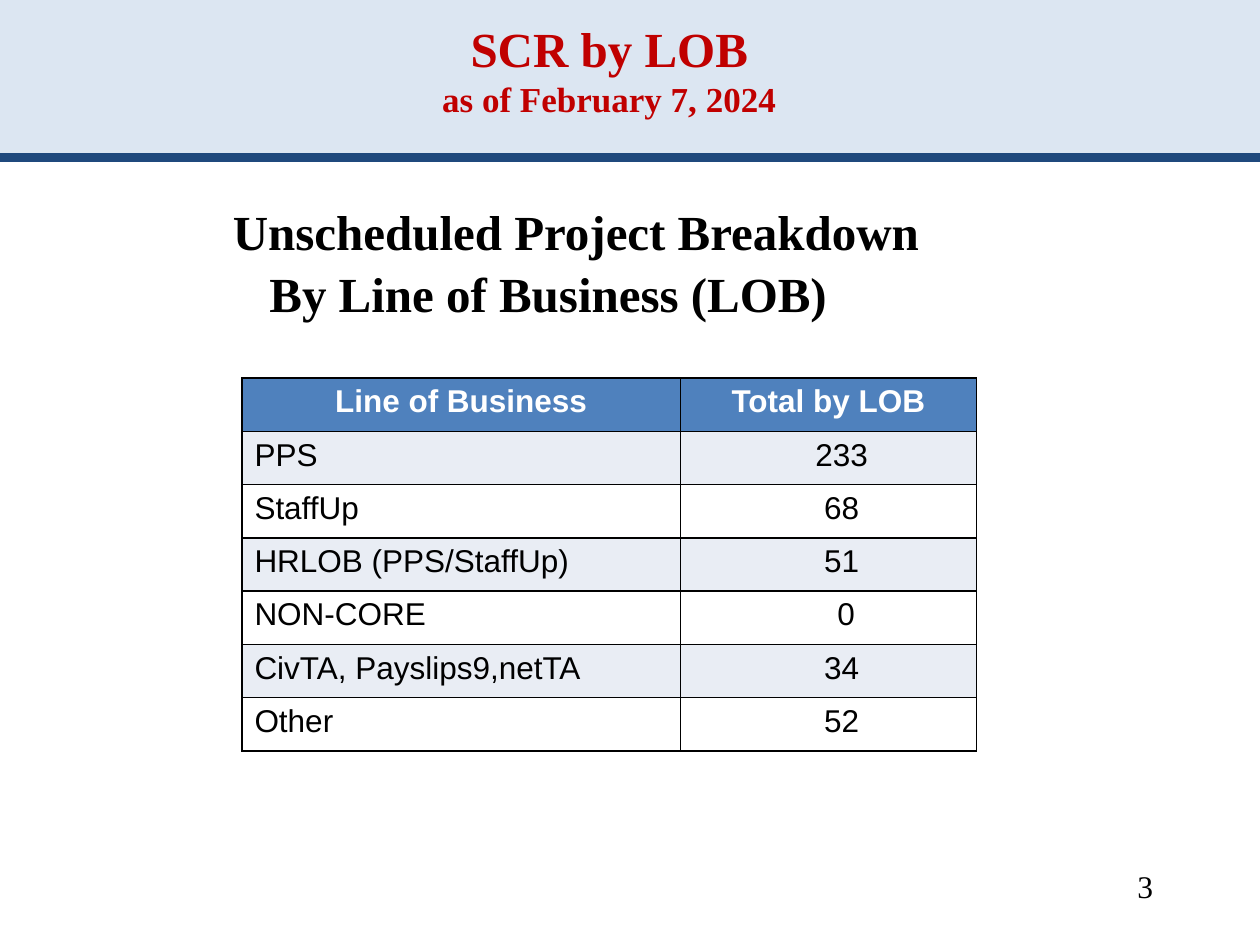
from lxml import etree
from pptx import Presentation, util as u
from pptx.dml.color import RGBColor
from pptx.enum import shapes, text
from pptx.oxml.ns import qn

COLORS = {
    "band": "DCE6F2", "rule": "1F497D", "title": "C00000", "black": "000000",
    "white": "FFFFFF", "header": "4F81BD", "stripe": "E9EDF4",
}
SERIF, SANS = "Times New Roman", "Arial"
CENTER, RIGHT = text.PP_ALIGN.CENTER, text.PP_ALIGN.RIGHT

HEADINGS = ("Line of Business", "Total by LOB")
TOTALS = [
    ("PPS", "233"),
    ("StaffUp", "68"),
    ("HRLOB (PPS/StaffUp)", "51"),
    ("NON-CORE", "0"),
    ("CivTA, Payslips9,netTA", "34"),
    ("Other", "52"),
]


class SlideBuilder:
    """Holds the colours and the current page, and draws each kind of element."""

    def __init__(self, page):
        self.page = page

    def color(self, name):
        return RGBColor.from_string(COLORS[name])

    def style(self, para, size, face, color, bold=False, align=None):
        para.alignment = align
        font = para.font
        font.size, font.name, font.bold = u.Pt(size), face, bold
        font.color.rgb = self.color(color)

    def band(self, left, top, width, height, color):
        box = self.page.shapes.add_shape(
            shapes.MSO_SHAPE.RECTANGLE, *map(u.Inches, (left, top, width, height)))
        box.shadow.inherit = False
        box.fill.solid()
        box.fill.fore_color.rgb = self.color(color)
        box.line.fill.background()

    def rule(self, left, top, right, color, weight):
        line = self.page.shapes.add_connector(
            shapes.MSO_CONNECTOR.STRAIGHT, *map(u.Inches, (left, top, right, top)))
        line.line.color.rgb = self.color(color)
        line.line.width = u.Pt(weight)
        etree.SubElement(line._element.spPr, qn("a:effectLst"))

    def text_frame(self, left, top, width, height, anchor=text.MSO_ANCHOR.TOP):
        box = self.page.shapes.add_textbox(*map(u.Inches, (left, top, width, height)))
        frame = box.text_frame
        frame.word_wrap = True
        frame.vertical_anchor = anchor
        return frame

    def title(self, heading, subheading):
        frame = self.text_frame(0.17, 0.3, 9.33, 0.7, text.MSO_ANCHOR.BOTTOM)
        para = frame.paragraphs[0]
        self.style(para, 28, SERIF, "title", True, CENTER)
        para.add_run().text = heading
        para.add_line_break()
        span = para.add_run()
        span.text = subheading
        span.font.size = u.Pt(20)

    def body(self, lines):
        frame = self.text_frame(0.5, 1.5, 9, 1.3)
        frame.margin_top = u.Inches(0.1)
        for index, (words, indent) in enumerate(lines):
            para = frame.add_paragraph() if index else frame.paragraphs[0]
            para.text = words
            para._p.get_or_add_pPr().set("marL", str(u.Inches(indent)))
            if index:
                para.space_before = u.Pt(1.5)
            self.style(para, 28, SERIF, "black", True)

    def page_number(self, number):
        para = self.text_frame(7.17, 6.83, 2.08, 0.5).paragraphs[0]
        para.text = number
        self.style(para, 18, SERIF, "black", align=RIGHT)

    def cell(self, cell, words, fill, color, bold, align):
        cell.text = words
        self.style(cell.text_frame.paragraphs[0], 18, SANS, color, bold, align)
        properties = cell._tc.get_or_add_tcPr()
        for side in ("lnL", "lnR", "lnT", "lnB"):
            border = etree.SubElement(properties, qn(f"a:{side}"), w=str(u.Pt(1)))
            paint = etree.SubElement(border, qn("a:solidFill"))
            etree.SubElement(paint, qn("a:srgbClr"), val=COLORS["black"])
        cell.fill.solid()
        cell.fill.fore_color.rgb = self.color(fill)

    def table(self, headings, rows):
        table = self.page.shapes.add_table(
            len(rows) + 1, len(headings),
            *map(u.Inches, (1.92, 3, 5.83, 2.96))).table
        for column, width in zip(table.columns, (3.48, 2.35)):
            column.width = u.Inches(width)
        for index, heading in enumerate(headings):
            self.cell(table.cell(0, index), heading, "header", "white", True, CENTER)
        for index, (name, total) in enumerate(rows, 1):
            fill = "stripe" if index % 2 else "white"
            self.cell(table.cell(index, 0), name, fill, "black", False, None)
            count = table.cell(index, 1)
            self.cell(count, total, fill, "black", False, CENTER)
            count.margin_left = u.Inches(0.38 if len(total) == 1 else 0.31)


def main():
    deck = Presentation()
    deck.slide_width, deck.slide_height = u.Inches(10), u.Inches(7.5)
    slide = SlideBuilder(deck.slides.add_slide(deck.slide_layouts[6]))
    slide.band(0, 0, 10, 1.28, "band")
    slide.rule(0, 1.25, 10, "rule", 5.5)
    slide.title("SCR by LOB", "as of February 7, 2024")
    slide.body([("Unscheduled Project Breakdown", 1.25),
                ("By Line of Business (LOB)", 1.54)])
    slide.table(HEADINGS, TOTALS)
    slide.page_number("3")
    deck.save("out.pptx")


if __name__ == "__main__":
    main()
